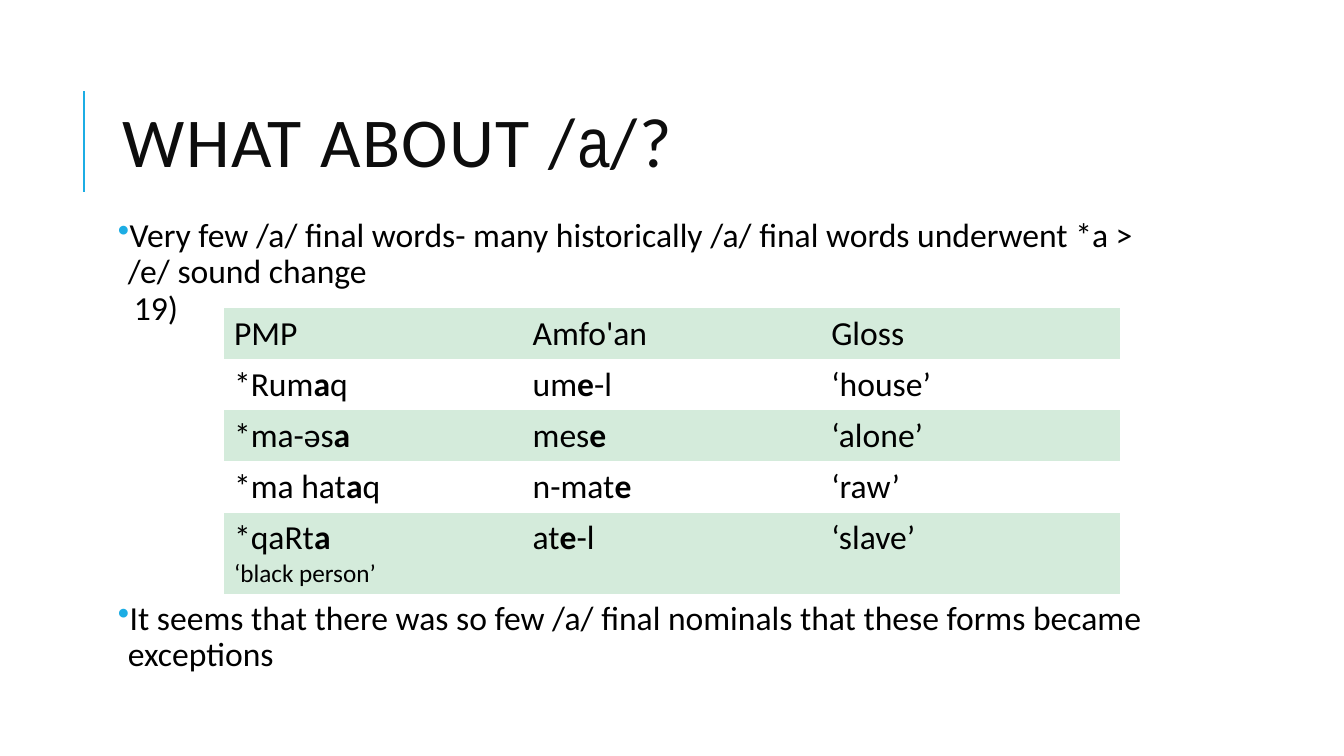
from pptx import Presentation
from pptx.dml.color import RGBColor
from pptx.enum.shapes import MSO_CONNECTOR
from pptx.enum.text import MSO_ANCHOR, MSO_AUTO_SIZE, PP_ALIGN
from pptx.oxml.ns import qn
from pptx.util import Pt
from lxml.etree import SubElement

HUES = {"ink": "000000", "title": "0D0D0D", "blue": "1CADE4", "band": "D4EBDB"}
FACE = "Calibri"

# Underscores enclose the bold part of a word
WORDS = [
    ("PMP", "Amfo'an", "Gloss"),
    ("*Rum_a_q", "um_e_-l", "‘house’"),
    ("*ma-əs_a_", "mes_e_", "‘alone’"),
    ("*ma hat_a_q", "n-mat_e_", "‘raw’"),
    ("*qaRt_a_", "at_e_-l", "‘slave’"),
]
NOTE = "‘black person’"


def color(name):
    return RGBColor.from_string(HUES[name])


def write(para, text, size=24, hue="ink", face=FACE, bold=False, track=None):
    """Add one run of text to a paragraph."""
    run = para.add_run()
    run.text = text
    font = run.font
    font.size, font.name, font.bold = Pt(size), face, bold
    font.color.rgb = color(hue)
    if track:
        run._r.get_or_add_rPr().set("spc", str(track))


def mark(para, indent=7.2):
    """Give a paragraph a blue bullet with a hanging indent."""
    props = para._p.get_or_add_pPr()
    props.set("marL", str(Pt(indent)))
    props.set("indent", str(Pt(-indent)))
    tint = SubElement(props, qn("a:buClr"))
    SubElement(tint, qn("a:srgbClr")).set("val", HUES["blue"])
    SubElement(props, qn("a:buChar")).set("char", "•")
    para.line_spacing = 0.9
    para.space_after = Pt(2)


def head(slide, left, top, wide, high):
    # Accent rule beside the title
    x = left - 20.9
    rule = slide.shapes.add_connector(
        MSO_CONNECTOR.STRAIGHT, Pt(x), Pt(top + 90.7), Pt(x), Pt(top + 18.7))
    rule.line.color.rgb = color("blue")
    rule.line.width = Pt(1.5)
    SubElement(rule._element.spPr, qn("a:effectLst"))

    # Title
    title = slide.shapes.title
    title.left, title.top, title.width, title.height = map(Pt, (left, top, wide, high))
    frame = title.text_frame
    frame.word_wrap = True
    frame.auto_size = MSO_AUTO_SIZE.NONE
    frame.vertical_anchor = MSO_ANCHOR.MIDDLE
    para = frame.paragraphs[0]
    para.alignment = PP_ALIGN.LEFT
    para.line_spacing = 0.8
    for text, face in (("WHAT ABOUT /", FACE), ("a", "Arial Narrow"), ("/?", FACE)):
        write(para, text, size=50, hue="title", face=face, track=100)


def block(slide, text, left, top, wide, high, bullet=True):
    """Place a text box, with a bullet and tight margins if asked."""
    frame = slide.shapes.add_textbox(*map(Pt, (left, top, wide, high))).text_frame
    frame.word_wrap = True
    para = frame.paragraphs[0]
    if bullet:
        frame.margin_left = frame.margin_right = Pt(3.6)
        frame.margin_top = frame.margin_bottom = Pt(3.6)
        mark(para)
    write(para, text)


def grid(slide, left, top, wide, row=36.5, last=58.5):
    high = row * (len(WORDS) - 1) + last
    shape = slide.shapes.add_table(
        len(WORDS), len(WORDS[0]), *map(Pt, (left, top, wide, high)))
    table = shape.table
    table.first_row = table.horz_banding = False
    # Plain style without grid lines
    table._tbl.tblPr.find(qn("a:tableStyleId")).text = (
        "{2D5ABB26-0587-4C30-8999-92F81FD0307C}")

    for r, words in enumerate(WORDS):
        table.rows[r].height = Pt(last if r == len(WORDS) - 1 else row)
        for c, word in enumerate(words):
            cell = table.cell(r, c)
            if r % 2:
                cell.fill.background()
            else:
                cell.fill.solid()
                cell.fill.fore_color.rgb = color("band")
            para = cell.text_frame.paragraphs[0]
            for i, part in enumerate(word.split("_")):
                if part:
                    write(para, part, bold=i % 2 == 1)

    # Gloss under the last form
    para = table.cell(len(WORDS) - 1, 0).text_frame.add_paragraph()
    write(para, NOTE, size=18)


def main():
    deck = Presentation()
    deck.slide_width, deck.slide_height = Pt(960), Pt(540)
    slide = deck.slides.add_slide(deck.slide_layouts[5])
    left, wide = 80.6, 765.4
    head(slide, left, 46.1, wide, 118.1)
    block(slide, "Very few /a/ final words- many historically /a/ final words "
          "underwent *a > /e/ sound change", left, 152.6, wide, 85.7)
    grid(slide, 160, 220.2, 640)
    block(slide, "19)", 88.6, 201.6, 51.8, 36, bullet=False)
    block(slide, "It seems that there was so few /a/ final nominals that these "
          "forms became exceptions", left, 426.2, wide, 85.7)
    deck.save("out.pptx")


if __name__ == "__main__":
    main()
